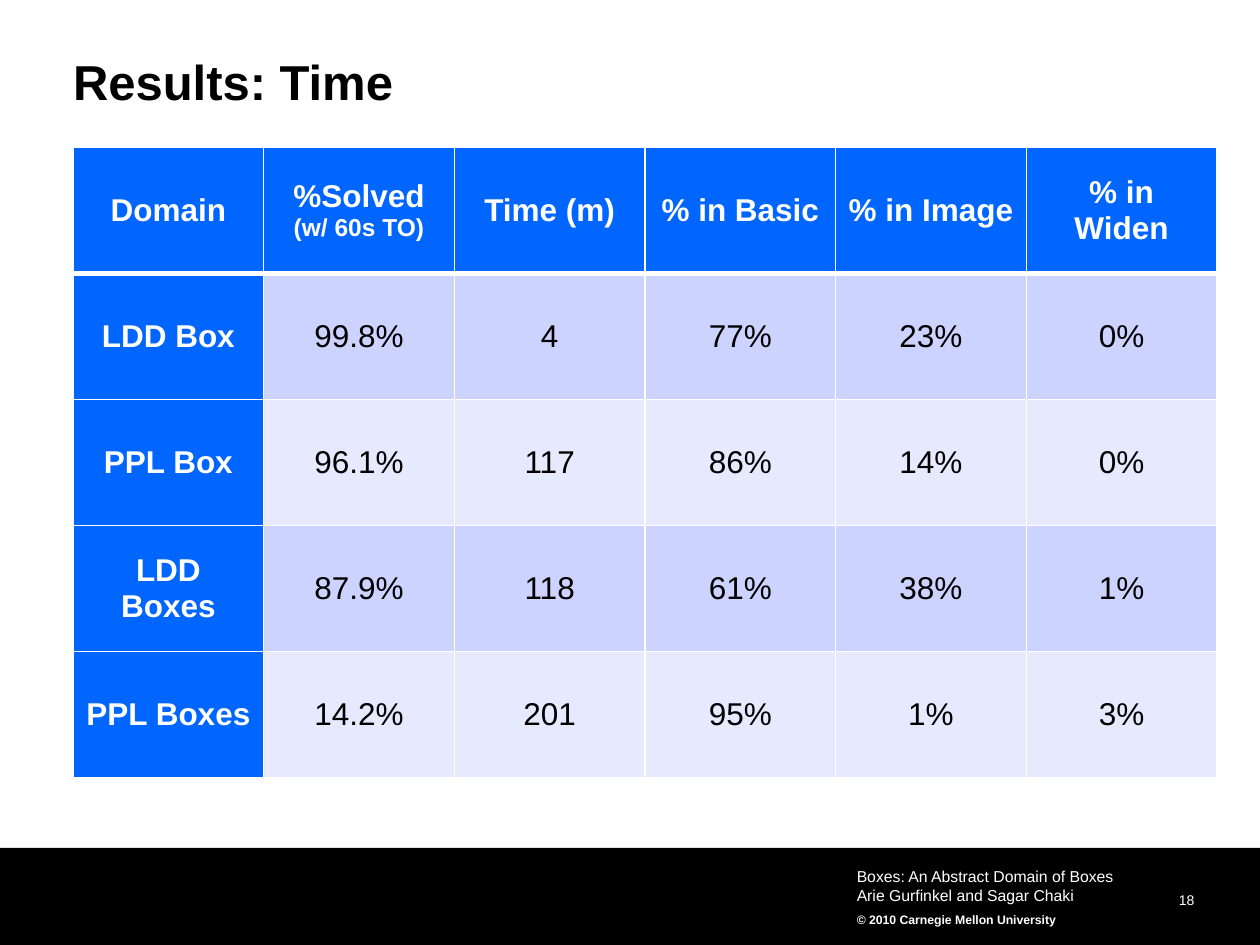
from dataclasses import dataclass

from lxml import etree
from pptx import Presentation
from pptx.dml.color import RGBColor
from pptx.enum.shapes import MSO_SHAPE
from pptx.enum.text import MSO_ANCHOR, PP_ALIGN
from pptx.oxml.ns import qn
from pptx.util import Inches, Pt

RECTANGLE = MSO_SHAPE.RECTANGLE
TOP, MIDDLE = MSO_ANCHOR.TOP, MSO_ANCHOR.MIDDLE
LEFT, CENTER, RIGHT = PP_ALIGN.LEFT, PP_ALIGN.CENTER, PP_ALIGN.RIGHT

SLIDE_WIDTH, SLIDE_HEIGHT = 10, 7.5
MARGIN = 0.58
TABLE_TOP, TABLE_WIDTH, TABLE_HEIGHT = 1.17, 9.08, 5
FOOTER_HEIGHT = 0.77


@dataclass(frozen=True)
class Theme:
    font: str = "Arial"
    black: str = "000000"
    white: str = "FFFFFF"
    accent: str = "0066FF"
    bands: tuple = ("CCD3FF", "E7EAFF")
    title: float = 28
    body: float = 18
    note: float = 14
    footer: float = 9
    page: float = 8
    copyright: float = 7
    rule: float = 1
    heavy_rule: float = 3


THEME = Theme()

HEADERS = [
    ["Domain"],
    ["%Solved", "(w/ 60s TO)"],
    ["Time (m)"],
    ["% in Basic"],
    ["% in Image"],
    ["% in Widen"],
]
RESULTS = [
    ["LDD Box", "99.8%", "4", "77%", "23%", "0%"],
    ["PPL Box", "96.1%", "117", "86%", "14%", "0%"],
    ["LDD Boxes", "87.9%", "118", "61%", "38%", "1%"],
    ["PPL Boxes", "14.2%", "201", "95%", "1%", "3%"],
]


def write_line(frame, index, text, size, color, bold=False, align=LEFT, spacing=None):
    """Write one paragraph; the first uses the frame's own paragraph."""
    paragraph = frame.paragraphs[0] if index == 0 else frame.add_paragraph()
    paragraph.alignment = align
    if spacing is not None:
        paragraph.line_spacing = spacing
    run = paragraph.add_run()
    run.text = text
    run.font.name = THEME.font
    run.font.size = Pt(size)
    run.font.bold = bold
    run.font.color.rgb = RGBColor.from_string(color)


def add_text_frame(slide, left, top, width, height, inset=0, anchor=TOP):
    box = slide.shapes.add_textbox(
        Inches(left), Inches(top), Inches(width), Inches(height))
    frame = box.text_frame
    frame.word_wrap = True
    frame.vertical_anchor = anchor
    frame.margin_left = frame.margin_right = Inches(inset)
    frame.margin_top = frame.margin_bottom = Inches(inset)
    return frame


def add_footer(slide):
    # Black band
    band = slide.shapes.add_shape(
        RECTANGLE, 0, Inches(SLIDE_HEIGHT - FOOTER_HEIGHT),
        Inches(SLIDE_WIDTH), Inches(FOOTER_HEIGHT))
    band.shadow.inherit = False
    band.fill.solid()
    band.fill.fore_color.rgb = RGBColor.from_string(THEME.black)
    band.line.fill.background()

    # Page number
    page = add_text_frame(slide, 8.56, 7.03, 0.92, 0.18, anchor=MIDDLE)
    write_line(page, 0, "18", THEME.page, THEME.white, align=RIGHT, spacing=Pt(13))

    # Talk, authors and copyright
    credit = add_text_frame(slide, 6.75, 6.83, 2.5, 0.58, inset=0.05, anchor=MIDDLE)
    talk_lines = ["Boxes: An Abstract Domain of Boxes", "Arie Gurfinkel and Sagar Chaki"]
    for index, text in enumerate(talk_lines):
        write_line(credit, index, text, THEME.footer, THEME.white)
    write_line(credit, len(talk_lines), "© 2010 Carnegie Mellon University",
               THEME.copyright, THEME.white, bold=True, spacing=1.5)


def set_borders(cell, top, bottom):
    properties = cell._tc.get_or_add_tcPr()
    widths = {"a:lnL": THEME.rule, "a:lnR": THEME.rule, "a:lnT": top, "a:lnB": bottom}
    for tag, width in widths.items():
        line = etree.SubElement(properties, qn(tag), w=str(Pt(width)))
        fill = etree.SubElement(line, qn("a:solidFill"))
        etree.SubElement(fill, qn("a:srgbClr"), val=THEME.white)


def fill_cell(cell, row, column, lines):
    is_heading = row == 0 or column == 0
    set_borders(cell,
                top=THEME.heavy_rule if row == 1 else THEME.rule,
                bottom=THEME.heavy_rule if row == 0 else THEME.rule)
    cell.fill.solid()
    cell.fill.fore_color.rgb = RGBColor.from_string(
        THEME.accent if is_heading else THEME.bands[(row - 1) % 2])
    cell.vertical_anchor = MIDDLE
    for index, text in enumerate(lines):
        write_line(cell.text_frame, index, text,
                   THEME.body if index == 0 else THEME.note,
                   THEME.white if is_heading else THEME.black,
                   bold=is_heading, align=CENTER)


def add_results_table(slide):
    rows = [HEADERS] + [[[value] for value in result] for result in RESULTS]
    table = slide.shapes.add_table(
        len(rows), len(HEADERS), Inches(MARGIN), Inches(TABLE_TOP),
        Inches(TABLE_WIDTH), Inches(TABLE_HEIGHT)).table
    table.first_row = table.horz_banding = False
    for row, contents in enumerate(rows):
        for column, lines in enumerate(contents):
            fill_cell(table.cell(row, column), row, column, lines)


def main():
    presentation = Presentation()
    presentation.slide_width = Inches(SLIDE_WIDTH)
    presentation.slide_height = Inches(SLIDE_HEIGHT)
    slide = presentation.slides.add_slide(presentation.slide_layouts[6])

    add_footer(slide)
    title = add_text_frame(slide, MARGIN, 0.46, 8.92, 0.42)
    write_line(title, 0, "Results: Time", THEME.title, THEME.black,
               bold=True, spacing=0.9)
    add_results_table(slide)

    presentation.save("out.pptx")


if __name__ == "__main__":
    main()
